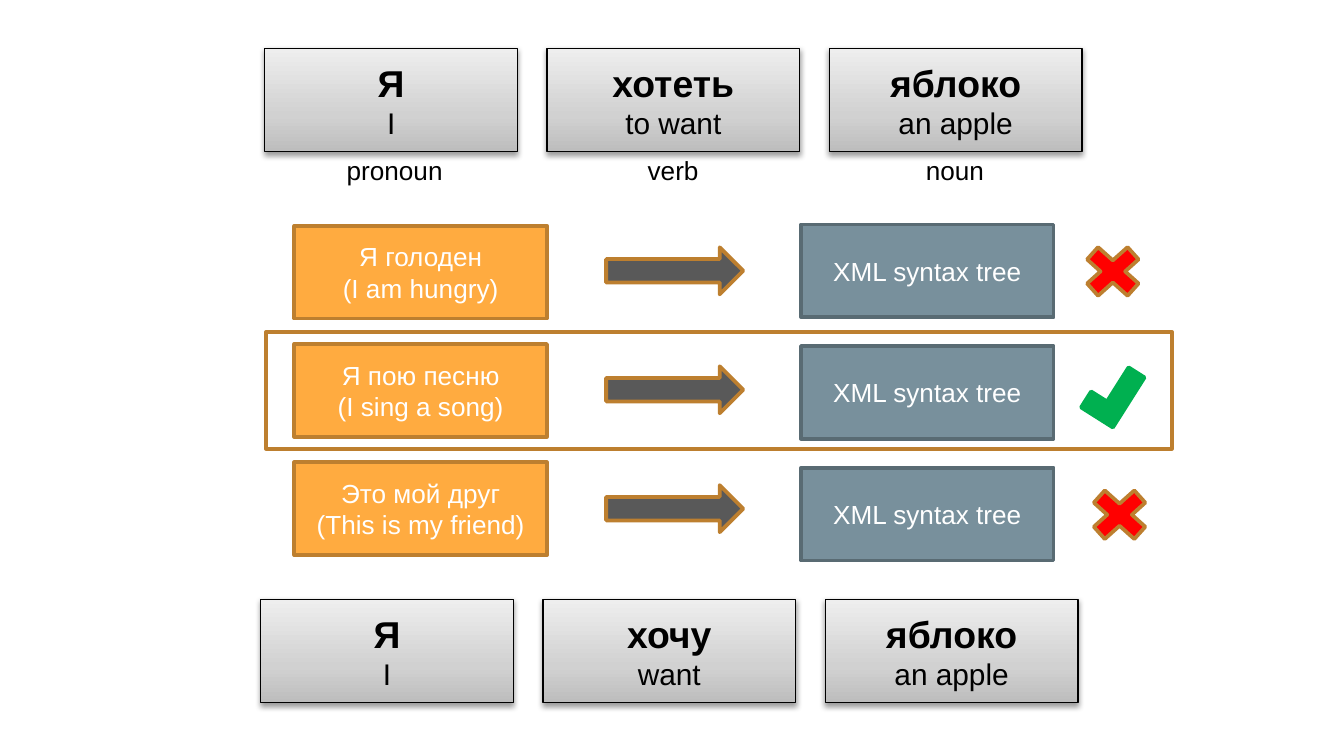
from dataclasses import dataclass

from lxml import etree
from pptx import Presentation
from pptx.dml.color import RGBColor
from pptx.enum.shapes import MSO_SHAPE
from pptx.enum.text import MSO_ANCHOR, MSO_AUTO_SIZE, PP_ALIGN
from pptx.oxml.ns import qn
from pptx.util import Inches, Pt

RECT, ARROW = MSO_SHAPE.RECTANGLE, MSO_SHAPE.RIGHT_ARROW
CROSS, CORNER = MSO_SHAPE.MATH_MULTIPLY, MSO_SHAPE.CORNER
CENTER, LEFT = PP_ALIGN.CENTER, PP_ALIGN.LEFT
MIDDLE, FIT_SHAPE = MSO_ANCHOR.MIDDLE, MSO_AUTO_SIZE.SHAPE_TO_FIT_TEXT

FONT = "Arial"
BLACK, WHITE = "000000", "FFFFFF"
ORANGE, BROWN, GRAY = "FFAB40", "BD7F2F", "595959"
SLATE, DARK_SLATE = "78909C", "596B73"
GREEN, RED = "00B050", "FF0000"
CARD_STOPS = ((0, "BDBDBD"), (35, "D1D1D1"), (100, "EEEEEE"))


@dataclass(frozen=True)
class Grid:
    """Equal boxes; a step is the distance between neighbouring starts."""
    left: float
    top: float
    width: float
    height: float
    col_step: float = 0
    row_step: float = 0

    def box(self, col: int = 0, row: int = 0) -> tuple:
        return (self.left + col * self.col_step, self.top + row * self.row_step,
                self.width, self.height)


@dataclass(frozen=True)
class Word:
    text: str
    meaning: str


@dataclass(frozen=True)
class Label:
    text: str
    left: float
    width: float


INPUT_CARDS = Grid(1.97, 0.36, 1.88, 0.77, col_step=2.1)
OUTPUT_CARDS = Grid(1.94, 4.46, 1.88, 0.77, col_step=2.1)
SENTENCES = Grid(2.19, 1.68, 1.88, 0.69, row_step=0.88)
ARROWS = Grid(4.51, 1.84, 1.02, 0.35, row_step=1.77 / 2)
TREES = Grid(5.96, 1.67, 1.88, 0.69, row_step=1.81 / 2)
CROSSES = Grid(7.99, 1.76, 0.58, 0.52, col_step=0.05, row_step=1.81)
CHECK = Grid(8.06, 2.78, 0.44, 0.28)
MATCH_FRAME = Grid(1.98, 2.47, 6.74, 0.87)

INPUT_WORDS = (Word("Я", "I"), Word("хотеть", "to want"), Word("яблоко", "an apple"))
OUTPUT_WORDS = (Word("Я", "I"), Word("хочу", "want"), Word("яблоко", "an apple"))
LABELS = (Label("pronoun", 2.48, 0.92), Label("verb", 4.72, 0.58),
          Label("noun", 6.79, 0.64))
EXAMPLES = (("Я голоден", "(I am hungry)"), ("Я пою песню", "(I sing a song)"),
            ("Это мой друг", "(This is my friend)"))


def rgb(color: str) -> RGBColor:
    return RGBColor.from_string(color)


def write(tf, *lines: str, sizes=(14,), color=BLACK, align=CENTER, bold_first=False):
    """Put each line in its own paragraph; the last size serves the remaining lines."""
    for i, text in enumerate(lines):
        p = tf.paragraphs[0] if i == 0 else tf.add_paragraph()
        p.alignment = align
        r = p.add_run()
        r.text = text
        r.font.name = FONT
        r.font.size = Pt(sizes[min(i, len(sizes) - 1)])
        r.font.bold = bold_first and i == 0
        r.font.color.rgb = rgb(color)


def add_shape(s, kind, box: tuple, fill: str | None, line: str, weight: float = 2):
    sp = s.shapes.add_shape(kind, *map(Inches, box))
    sp.shadow.inherit = False
    if fill:
        sp.fill.solid()
        sp.fill.fore_color.rgb = rgb(fill)
    else:
        sp.fill.background()
    sp.line.color.rgb = rgb(line)
    sp.line.width = Pt(weight)
    sp.text_frame.vertical_anchor = MIDDLE
    return sp


def shade(sp) -> None:
    """Give a card its three-stop gradient and soft shadow."""
    sp.fill.gradient()
    sp.fill.gradient_angle = 90
    stops = sp._element.spPr.find(".//" + qn("a:gsLst"))
    for stop in list(stops):
        stops.remove(stop)
    for percent, color in CARD_STOPS:
        stop = etree.SubElement(stops, qn("a:gs"), pos=str(percent * 1000))
        etree.SubElement(stop, qn("a:srgbClr"), val=color)
    effects = sp._element.spPr.find(qn("a:effectLst"))
    shadow = etree.SubElement(effects, qn("a:outerShdw"), blurRad=str(Pt(3.1)),
                              dist=str(Pt(1.6)), dir="5400000", rotWithShape="0")
    tint = etree.SubElement(shadow, qn("a:srgbClr"), val=BLACK)
    etree.SubElement(tint, qn("a:alpha"), val="38000")


def add_cards(s, grid: Grid, words: tuple) -> None:
    for col, word in enumerate(words):
        sp = add_shape(s, RECT, grid.box(col), None, BLACK, 0.75)
        shade(sp)
        write(sp.text_frame, word.text, word.meaning, sizes=(20, 16), bold_first=True)


def add_label(s, label: Label) -> None:
    tf = s.shapes.add_textbox(*map(Inches, (label.left, 1.1, label.width, 0.34))).text_frame
    tf.word_wrap = False
    tf.auto_size = FIT_SHAPE
    write(tf, label.text, align=LEFT)


def add_example(s, row: int, lines: tuple) -> None:
    sentence = add_shape(s, RECT, SENTENCES.box(row=row), ORANGE, BROWN)
    write(sentence.text_frame, *lines, color=WHITE)
    add_shape(s, ARROW, ARROWS.box(row=row), GRAY, BROWN)
    tree = add_shape(s, RECT, TREES.box(row=row), SLATE, DARK_SLATE)
    write(tree.text_frame, "XML syntax tree", color=WHITE)


def main() -> None:
    prs = Presentation()
    prs.slide_width = Inches(10)
    prs.slide_height = prs.slide_width * 9 // 16
    s = prs.slides.add_slide(prs.slide_layouts[6])

    for row, lines in enumerate(EXAMPLES):
        add_example(s, row, lines)
    add_cards(s, INPUT_CARDS, INPUT_WORDS)
    for label in LABELS:
        add_label(s, label)
    check = add_shape(s, CORNER, CHECK.box(), GREEN, GREEN)
    check.rotation = 302.3
    for i in range(2):
        add_shape(s, CROSS, CROSSES.box(i, i), RED, BROWN)
    add_cards(s, OUTPUT_CARDS, OUTPUT_WORDS)
    add_shape(s, RECT, MATCH_FRAME.box(), None, BROWN)
    prs.save("out.pptx")


if __name__ == "__main__":
    main()
